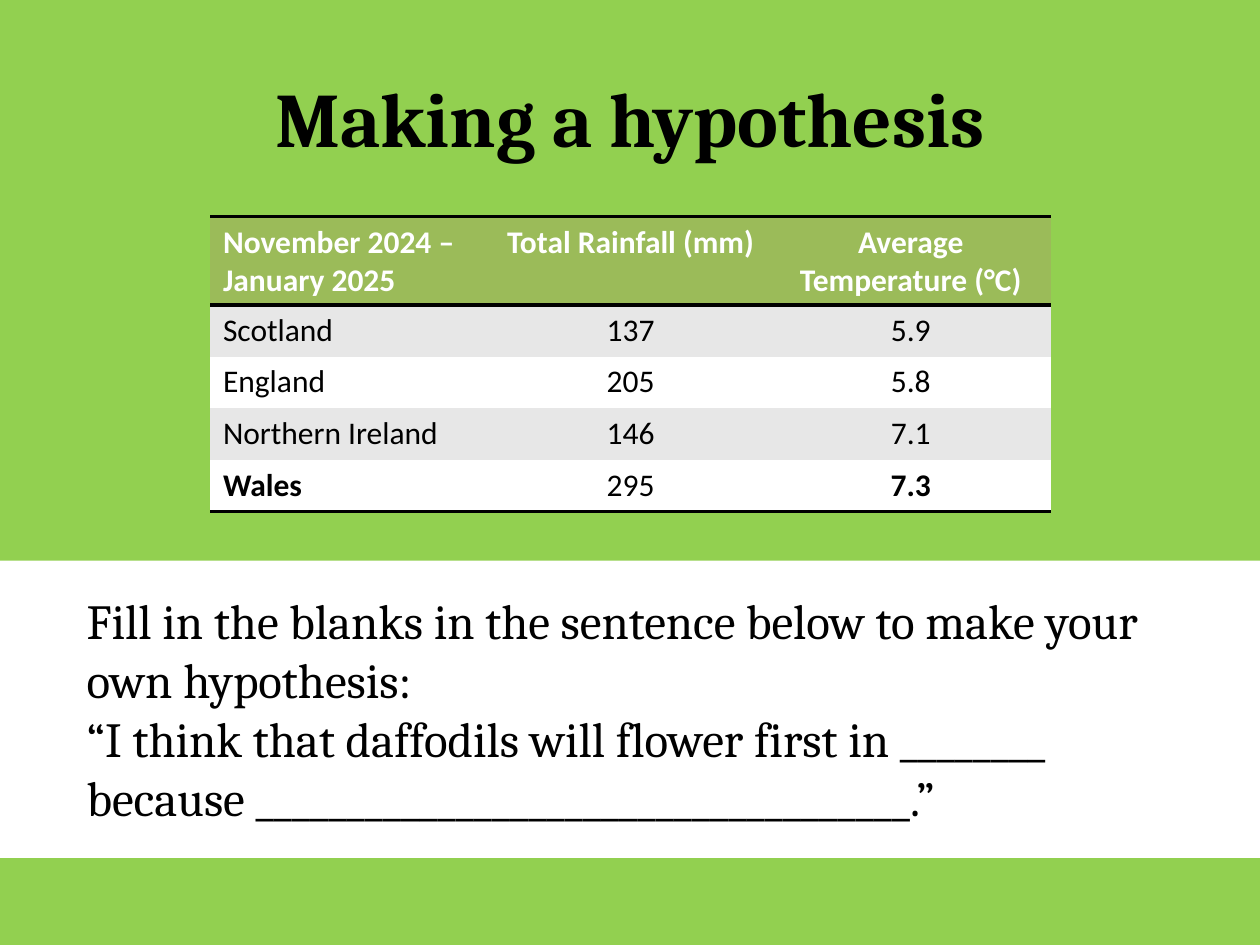
from lxml.etree import SubElement
from pptx import Presentation
from pptx.dml.color import RGBColor
from pptx.enum.shapes import MSO_SHAPE as Shape
from pptx.enum.text import MSO_ANCHOR as Anchor, PP_ALIGN as Align
from pptx.oxml.ns import qn
from pptx.util import Inches, Pt

TITLE = "Making a hypothesis"
HEAD = [["November 2024 –", "January 2025"],
        ["Total Rainfall (mm)"],
        ["Average Temperature (°C)"]]
ROWS = [("Scotland", "137", "5.9"),
        ("England", "205", "5.8"),
        ("Northern Ireland", "146", "7.1"),
        ("Wales", "295", "7.3")]
BOLD = {"Wales", "7.3"}
TASK = ["Fill in the blanks in the sentence below to make your own hypothesis:",
        "“I think that daffodils will flower first in ________",
        "because ____________________________________.”"]

BLACK, WHITE = "000000", "FFFFFF"
GREEN, OLIVE, GREY = "92D050", "9BBB59", "E7E7E7"


def paint(fill, color):
    fill.solid()
    fill.fore_color.rgb = RGBColor.from_string(color)


def write(frame, lines, size, face, color=BLACK, bold=False, align=Align.LEFT):
    """Put each line in its own paragraph of the frame."""
    for i, line in enumerate(lines):
        para = frame.paragraphs[0] if i == 0 else frame.add_paragraph()
        para.alignment = align
        run = para.add_run()
        run.text = line
        font = run.font
        font.size, font.name, font.bold = Pt(size), face, bold
        font.color.rgb = RGBColor.from_string(color)


def rule(cell, side):
    """Draw a black 2 pt border; call before the cell is filled."""
    line = SubElement(cell._tc.get_or_add_tcPr(), qn(f"a:ln{side}"),
                      w=str(Pt(2)))
    fill = SubElement(line, qn("a:solidFill"))
    SubElement(fill, qn("a:srgbClr"), val=BLACK)


deck = Presentation()
deck.slide_width, deck.slide_height = Inches(10), Inches(7.5)
slide = deck.slides.add_slide(deck.slide_layouts[5])
paint(slide.background.fill, GREEN)
shapes = slide.shapes

band = shapes.add_shape(Shape.RECTANGLE, Inches(0), Inches(4.45),
                        Inches(10), Inches(2.36))
band.shadow.inherit = False
paint(band.fill, WHITE)
band.line.fill.background()

title = shapes.title
title.left, title.top = Inches(0.5), Inches(0.3)
title.width, title.height = Inches(9), Inches(1.25)
title.text_frame.vertical_anchor = Anchor.MIDDLE
write(title.text_frame, [TITLE], 44, "Cambria", bold=True, align=Align.CENTER)

task = shapes.add_textbox(Inches(0.59), Inches(4.64), Inches(9.06), Inches(1.99))
task.text_frame.word_wrap = True
write(task.text_frame, TASK, 28, "Cambria")

grid = [HEAD] + [[[text] for text in row] for row in ROWS]
last = len(grid) - 1
table = shapes.add_table(len(grid), len(HEAD), Inches(1.67), Inches(1.72),
                         Inches(6.67), Inches(2.32)).table
# The "No Style, No Grid" table style
table._tbl.tblPr.find(qn("a:tableStyleId")).text = (
    "{2D5ABB26-0587-4C30-8999-92F81FD0307C}")

for r, row in enumerate(grid):
    table.rows[r].height = Inches(0.41 if r else 0.7)
    for c, lines in enumerate(row):
        cell = table.cell(r, c)
        if r == 0:
            rule(cell, "T")
        if r in (0, last):
            rule(cell, "B")
        paint(cell.fill, OLIVE if r == 0 else GREY if r % 2 else WHITE)
        write(cell.text_frame, lines, 18, "Calibri",
              color=BLACK if r else WHITE,
              bold=r == 0 or lines[0] in BOLD,
              align=Align.CENTER if c else Align.LEFT)

deck.save("out.pptx")
